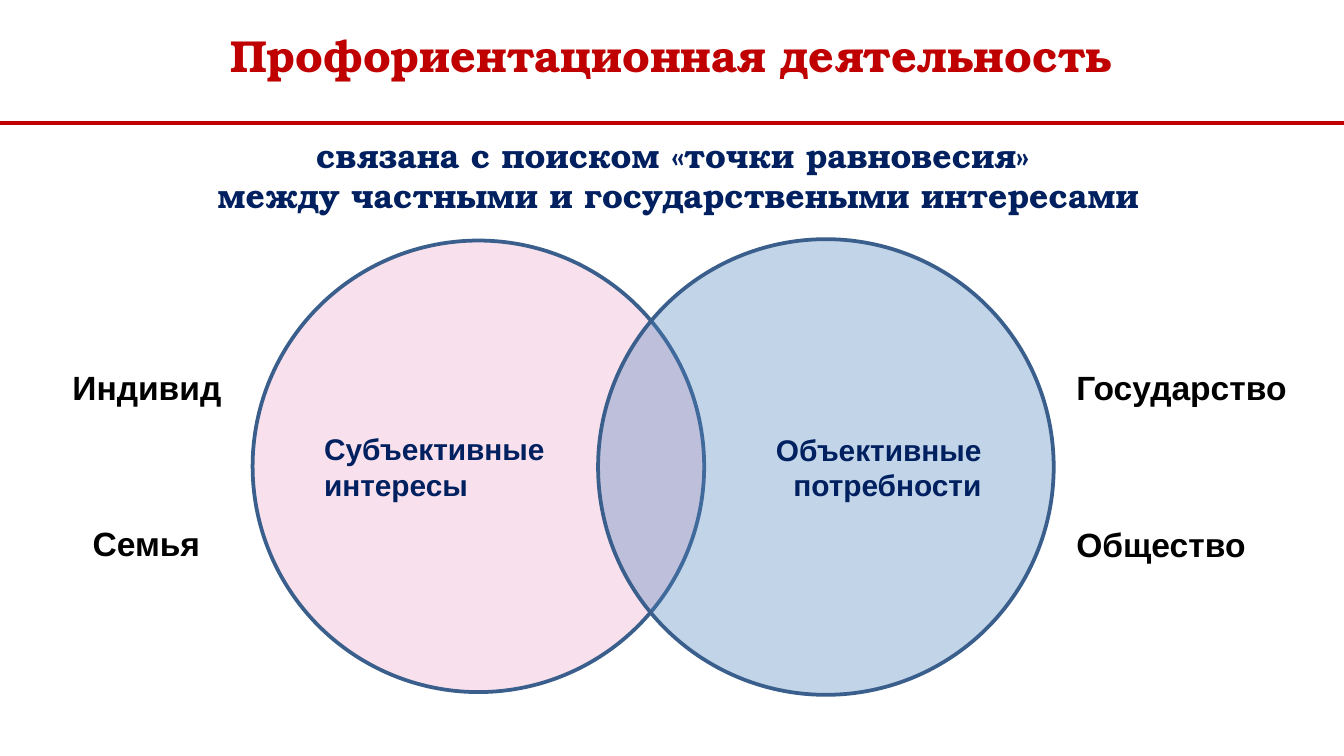
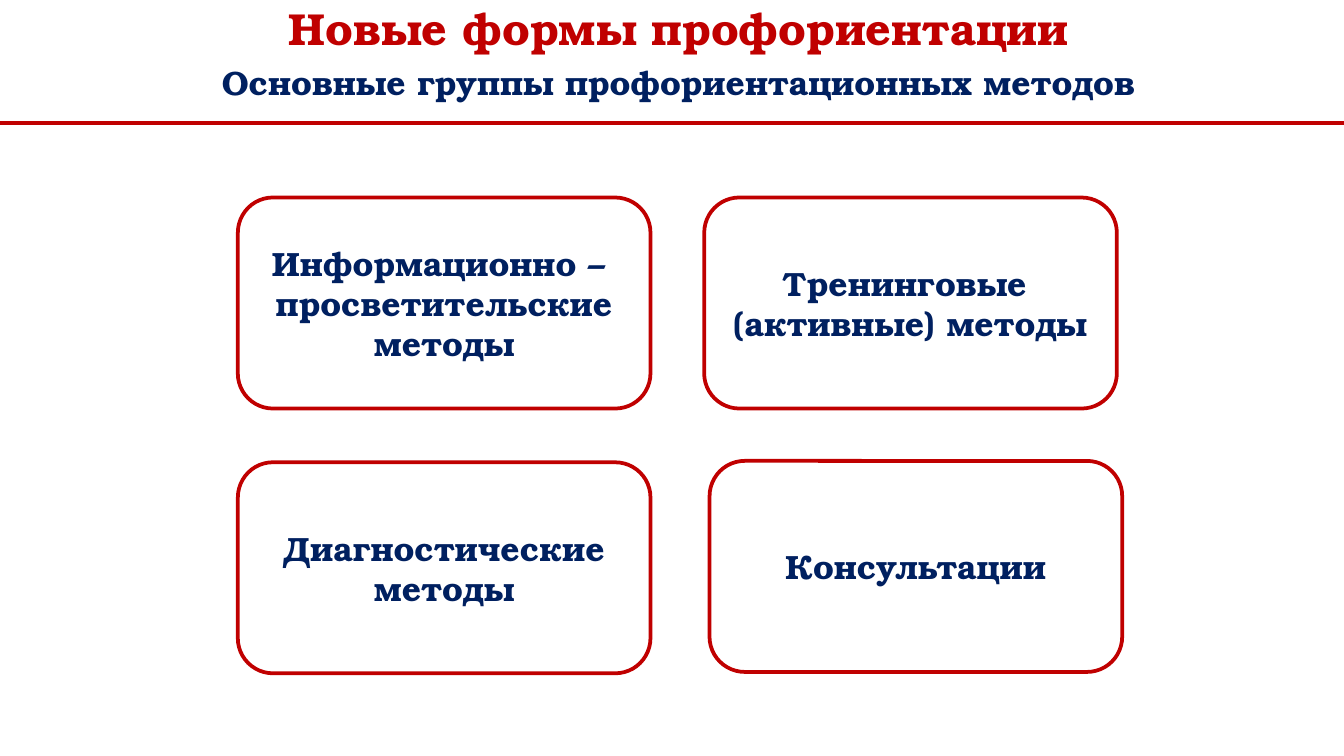
from dataclasses import dataclass

from lxml import etree
from pptx import Presentation
from pptx import util as u
from pptx.dml.color import RGBColor
from pptx.enum import shapes, text
from pptx.oxml.ns import qn

COLORS = {
    "red": "C00000",
    "navy": "002060",
    "black": "000000",
    "outline": "3A5F8C",
    "pink": "CC0066",
    "blue": "4F81BD",
}
SERIF, SANS = "TeX Gyre Bonum", "Arial"
LEFT, CENTER, RIGHT = text.PP_ALIGN.LEFT, text.PP_ALIGN.CENTER, text.PP_ALIGN.RIGHT
WIDTH = u.Inches(10)
HEIGHT = WIDTH * 9 // 16
COLUMNS, ROWS = 100, 56.25
RULE_ROW = 9.15
STROKE = 2


@dataclass(frozen=True)
class Place:
    column: float
    row: float
    columns: float
    rows: float

    def lengths(self) -> tuple:
        return (across(self.column), down(self.row), across(self.columns), down(self.rows))


@dataclass(frozen=True)
class Style:
    size: int
    color: str
    font: str
    align: int = CENTER


@dataclass(frozen=True)
class Line:
    words: str
    style: Style
    before: float = 0
    after: float = 0


@dataclass(frozen=True)
class Circle:
    place: Place
    fill: str
    opacity: int
    align: int
    words: tuple


@dataclass(frozen=True)
class Label:
    words: str
    place: Place


@dataclass(frozen=True)
class Card:
    words: tuple
    column: int
    row: int
    shift_column: float = 0
    shift_row: float = 0


TITLE = Style(24, "red", SERIF)
SUBTITLE = Style(18, "navy", SERIF)
LABEL = Style(18, "black", SANS, LEFT)

CIRCLES = (
    Circle(Place(18.8, 17.9, 33.6, 33.6), "pink", 12, LEFT, ("Субъективные", "интересы")),
    Circle(Place(44.5, 17.8, 33.9, 33.9), "blue", 34, RIGHT, ("Объективные", "потребности")),
)
LABELS = (
    Label("Государство", Place(79.1, 26.8, 17.8, 4)),
    Label("Общество", Place(79.1, 38.5, 15.7, 4)),
    Label("Индивид", Place(4.4, 26.8, 13.2, 4)),
    Label("Семья", Place(5.9, 38.4, 10.1, 4)),
)
CARD_GRID = Place(17.7, 14.7, 30.7, 15.7)
CARD_GAP = 4
CARDS = (
    Card(("Информационно – ", "просветительские методы"), 0, 0),
    Card(("Диагностические методы",), 0, 1),
    Card(("Тренинговые ", "(активные) методы"), 1, 0),
    Card(("Консультации",), 1, 1, 0.4, -0.1),
)


def across(columns: float) -> int:
    return round(WIDTH * columns / COLUMNS)


def down(rows: float) -> int:
    return round(HEIGHT * rows / ROWS)


def paint(name: str) -> RGBColor:
    return RGBColor.from_string(COLORS[name])


def write(frame, lines: list[Line]) -> None:
    for index, line in enumerate(lines):
        para = frame.add_paragraph() if index else frame.paragraphs[0]
        para.alignment = line.style.align
        para.space_before = u.Pt(line.before)
        para.space_after = u.Pt(line.after)
        span = para.add_run()
        span.text = line.words
        span.font.name = line.style.font
        span.font.size = u.Pt(line.style.size)
        span.font.bold = True
        span.font.color.rgb = paint(line.style.color)


def add_text(page, place: Place, lines: list[Line], wrap: bool = True) -> None:
    box = page.shapes.add_textbox(*place.lengths())
    box.text_frame.word_wrap = wrap
    box.text_frame.auto_size = text.MSO_AUTO_SIZE.SHAPE_TO_FIT_TEXT
    write(box.text_frame, lines)


def add_outlined(page, kind, place: Place, color: str, lines: list[Line]):
    shape = page.shapes.add_shape(kind, *place.lengths())
    shape.shadow.inherit = False
    shape.fill.background()
    shape.line.color.rgb = paint(color)
    shape.line.width = u.Pt(STROKE)
    shape.text_frame.word_wrap = True
    shape.text_frame.vertical_anchor = text.MSO_ANCHOR.MIDDLE
    write(shape.text_frame, lines)
    return shape


def add_circle(page, circle: Circle) -> None:
    style = Style(16, "navy", SANS, circle.align)
    lines = [Line(words, style) for words in circle.words]
    shape = add_outlined(page, shapes.MSO_SHAPE.OVAL, circle.place, "outline", lines)
    shape.fill.solid()
    shape.fill.fore_color.rgb = paint(circle.fill)
    tint = shape._element.spPr.find(qn("a:solidFill")).find(qn("a:srgbClr"))
    etree.SubElement(tint, qn("a:alpha")).set("val", str(circle.opacity * 1000))
    frame = shape.text_frame
    frame.margin_left = frame.margin_right = u.Inches(0.04)
    frame.margin_top = frame.margin_bottom = u.Inches(0.05)


def add_card(page, card: Card) -> None:
    place = Place(
        CARD_GRID.column + card.column * (CARD_GRID.columns + CARD_GAP) + card.shift_column,
        CARD_GRID.row + card.row * (CARD_GRID.rows + CARD_GAP) + card.shift_row,
        CARD_GRID.columns,
        CARD_GRID.rows,
    )
    lines = [Line(words, SUBTITLE) for words in card.words]
    add_outlined(page, shapes.MSO_SHAPE.ROUNDED_RECTANGLE, place, "red", lines)


def add_page(deck, row: float, rows: float, heading: list[Line]):
    page = deck.slides.add_slide(deck.slide_layouts[6])
    add_text(page, Place(0.5, row, COLUMNS, rows), heading)
    rule = page.shapes.add_connector(
        shapes.MSO_CONNECTOR.STRAIGHT, 0, down(RULE_ROW), WIDTH, down(RULE_ROW)
    )
    rule.line.color.rgb = paint("red")
    rule.line.width = u.Pt(STROKE)
    etree.SubElement(rule._element.spPr, qn("a:effectLst"))
    return page


def add_interests(deck) -> None:
    page = add_page(deck, 1.6, 15.1, [
        Line("Профориентационная деятельность ", TITLE, after=28.5),
        Line("связана с поиском «точки равновесия» ", SUBTITLE),
        Line("между частными и государствеными интересами", SUBTITLE),
    ])
    for circle in CIRCLES:
        add_circle(page, circle)
    for label in LABELS:
        add_text(page, label.place, [Line(label.words, LABEL)], wrap=False)


def add_methods(deck) -> None:
    page = add_page(deck, -0.4, 12.7, [
        Line("Новые формы профориентации", TITLE),
        Line("Основные группы профориентационных методов", SUBTITLE, before=4),
    ])
    for card in CARDS:
        add_card(page, card)


def main() -> None:
    deck = Presentation()
    deck.slide_width, deck.slide_height = WIDTH, HEIGHT
    add_interests(deck)
    add_methods(deck)
    deck.save("out.pptx")


if __name__ == "__main__":
    main()
